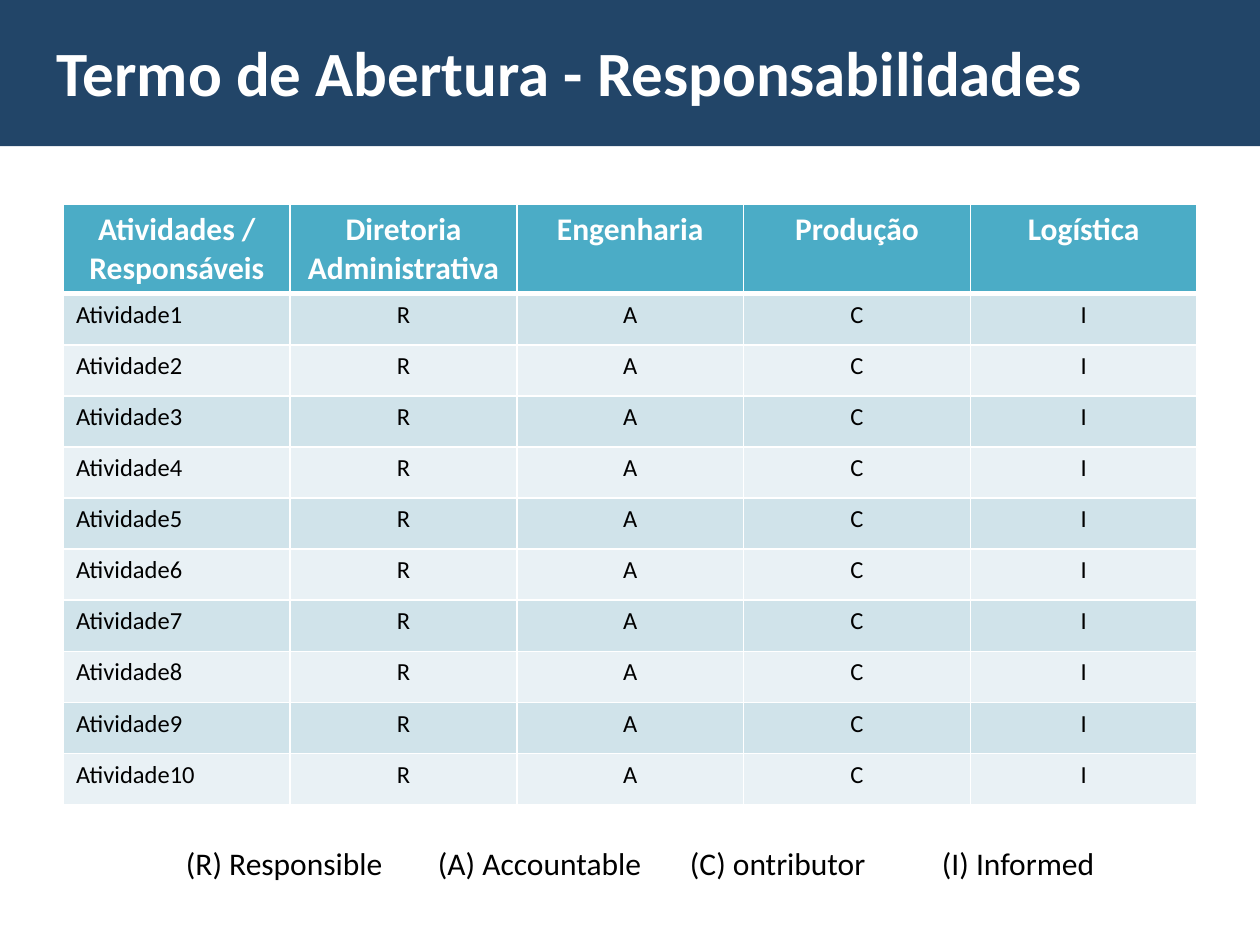
from enum import Enum

from lxml.etree import SubElement
from pptx import Presentation
from pptx.dml.color import RGBColor
from pptx.enum.shapes import MSO_SHAPE
from pptx.enum.text import MSO_ANCHOR, PP_ALIGN
from pptx.oxml.ns import qn
from pptx.util import Cm, Pt


class Theme(Enum):
    FONT = "Calibri"
    BAND = RGBColor.from_string("224568")
    HEADER = RGBColor.from_string("4BACC6")
    ODD_ROW = RGBColor.from_string("D0E3EA")
    EVEN_ROW = RGBColor.from_string("E9F1F5")
    WHITE = RGBColor.from_string("FFFFFF")
    BLACK = RGBColor.from_string("000000")
    TITLE_SIZE = Pt(36)
    LARGE_SIZE = Pt(18)
    BODY_SIZE = Pt(14)


def write(para, text, size, color, bold=False, align=PP_ALIGN.LEFT):
    para.alignment = align
    span = para.add_run()
    span.text = text
    formats = {"name": Theme.FONT.value, "size": size.value, "bold": bold}
    for name, value in formats.items():
        setattr(span.font, name, value)
    span.font.color.rgb = color.value


def add_borders(cell, widths):
    properties = cell._tc.get_or_add_tcPr()
    for position, (side, width) in enumerate(widths.items()):
        line = properties.makeelement(qn(f"a:{side}"), {"w": str(Pt(width))})
        fill = SubElement(line, qn("a:solidFill"))
        SubElement(fill, qn("a:srgbClr"), val=str(Theme.WHITE.value))
        properties.insert(position, line)


deck = Presentation()
deck.slide_width, deck.slide_height = Cm(25.4), Cm(19.05)
page = deck.slides.add_slide(deck.slide_layouts[6])

# Title band
band = page.shapes.add_shape(MSO_SHAPE.RECTANGLE, 0, 0, deck.slide_width, Cm(2.95))
band.shadow.inherit = False
band.fill.solid()
band.fill.fore_color.rgb = Theme.BAND.value
band.line.fill.background()

# Title
title = page.shapes.add_textbox(Cm(0.9), Cm(0.53), Cm(23.24), Cm(1.8))
title.text_frame.word_wrap = True
title.text_frame.vertical_anchor = MSO_ANCHOR.MIDDLE
write(title.text_frame.paragraphs[0], "Termo de Abertura - Responsabilidades",
      Theme.TITLE_SIZE, Theme.WHITE, bold=True)

# Responsibility matrix
headers = ["Atividades / Responsáveis", "Diretoria Administrativa",
           "Engenharia", "Produção", "Logística"]
rows = [headers] + [[f"Atividade{number}", *"RACI"] for number in range(1, 11)]
header_height, row_height = Cm(1.8), Cm(1.03)
table = page.shapes.add_table(len(rows), len(headers), Cm(1.28), Cm(4.12), Cm(22.86),
                              header_height + 10 * row_height).table
for column in table.columns:
    column.width = Cm(4.57)

for row_index, values in enumerate(rows):
    is_header = row_index == 0
    table.rows[row_index].height = header_height if is_header else row_height
    if is_header:
        fill, size, color = Theme.HEADER, Theme.LARGE_SIZE, Theme.WHITE
    else:
        fill = Theme.ODD_ROW if row_index % 2 else Theme.EVEN_ROW
        size, color = Theme.BODY_SIZE, Theme.BLACK
    for column_index, text in enumerate(values):
        cell = table.cell(row_index, column_index)
        cell.fill.solid()
        cell.fill.fore_color.rgb = fill.value
        add_borders(cell, {"lnL": 1, "lnR": 1, "lnT": 3 if row_index == 1 else 1,
                           "lnB": 3 if is_header else 1})
        centred = is_header or column_index > 0
        write(cell.text_frame.paragraphs[0], text, size, color, bold=is_header,
              align=PP_ALIGN.CENTER if centred else PP_ALIGN.LEFT)

# Legend, with a tab stop every 5.08 cm
legend = page.shapes.add_textbox(Cm(3.5), Cm(16.89), Cm(19.81), Cm(1.02))
legend.text_frame.word_wrap = True
para = legend.text_frame.paragraphs[0]
tabs = SubElement(para._p.get_or_add_pPr(), qn("a:tabLst"))
for stop in range(1, 4):
    SubElement(tabs, qn("a:tab"), pos=str(Cm(5.08 * stop)), algn="l")
write(para, "(R) Responsible\t(A) Accountable\t(C) ontributor\t(I) Informed",
      Theme.LARGE_SIZE, Theme.BLACK)

deck.save("out.pptx")
